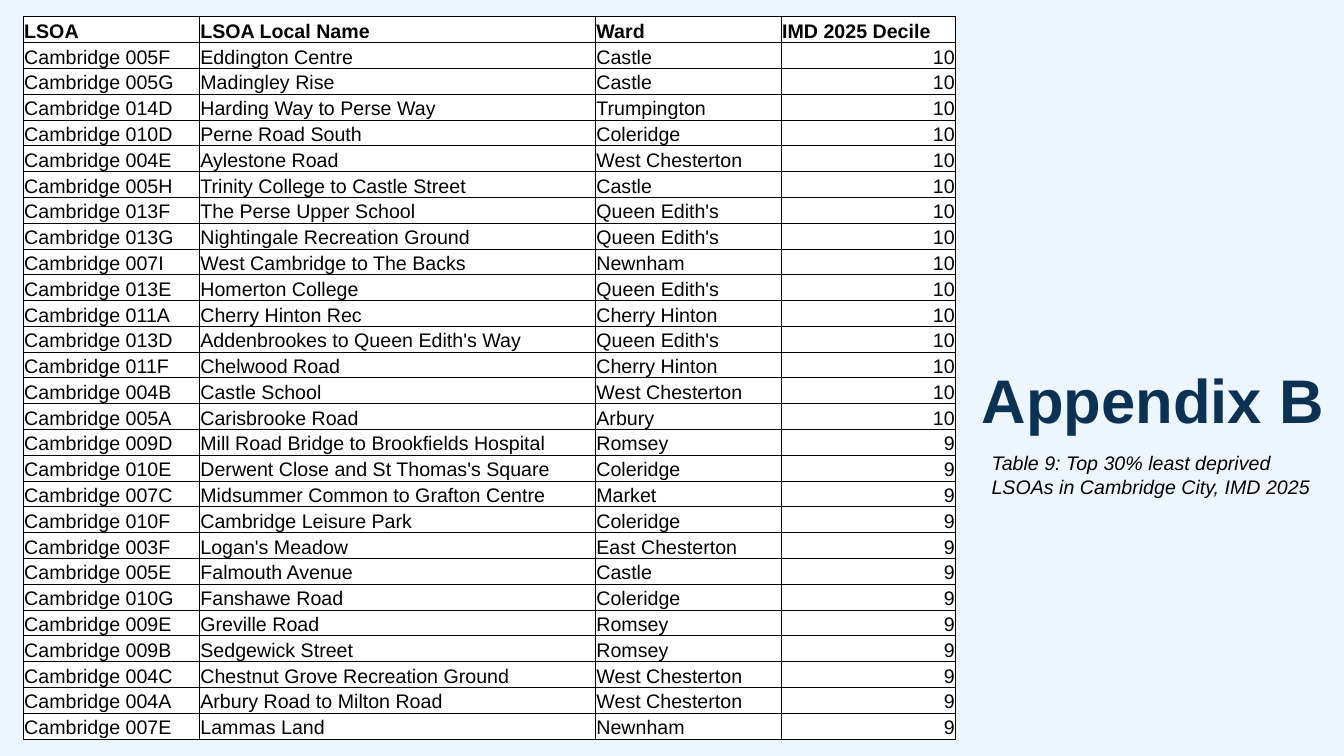
"""Build the Appendix B slide listing the least deprived LSOAs in Cambridge City."""
from dataclasses import dataclass

import pptx
import pptx.dml.color
import pptx.enum.text
import pptx.oxml
import pptx.oxml.ns
import pptx.util
from pptx.util import Cm

COLORS = {"background": "EDF6FF", "title": "0B3153", "text": "000000", "cell": "FFFFFF"}
FONT = "Arial"
ROW_HEIGHT = 0.65
BORDER_WIDTH = 0.5


@dataclass(frozen=True)
class Column:
    heading: str
    width: float
    right_aligned: bool = False


@dataclass(frozen=True)
class Area:
    code: str
    local_name: str
    ward: str
    decile: int

    def values(self) -> list[str]:
        return [f"Cambridge {self.code}", self.local_name, self.ward, str(self.decile)]


COLUMNS = [
    Column("LSOA", 4.44),
    Column("LSOA Local Name", 9.98),
    Column("Ward", 4.68),
    Column("IMD 2025 Decile", 4.39, right_aligned=True),
]

AREAS = [
    Area("005F", "Eddington Centre", "Castle", 10),
    Area("005G", "Madingley Rise", "Castle", 10),
    Area("014D", "Harding Way to Perse Way", "Trumpington", 10),
    Area("010D", "Perne Road South", "Coleridge", 10),
    Area("004E", "Aylestone Road", "West Chesterton", 10),
    Area("005H", "Trinity College to Castle Street", "Castle", 10),
    Area("013F", "The Perse Upper School", "Queen Edith's", 10),
    Area("013G", "Nightingale Recreation Ground", "Queen Edith's", 10),
    Area("007I", "West Cambridge to The Backs", "Newnham", 10),
    Area("013E", "Homerton College", "Queen Edith's", 10),
    Area("011A", "Cherry Hinton Rec", "Cherry Hinton", 10),
    Area("013D", "Addenbrookes to Queen Edith's Way", "Queen Edith's", 10),
    Area("011F", "Chelwood Road", "Cherry Hinton", 10),
    Area("004B", "Castle School", "West Chesterton", 10),
    Area("005A", "Carisbrooke Road", "Arbury", 10),
    Area("009D", "Mill Road Bridge to Brookfields Hospital", "Romsey", 9),
    Area("010E", "Derwent Close and St Thomas's Square", "Coleridge", 9),
    Area("007C", "Midsummer Common to Grafton Centre", "Market", 9),
    Area("010F", "Cambridge Leisure Park", "Coleridge", 9),
    Area("003F", "Logan's Meadow", "East Chesterton", 9),
    Area("005E", "Falmouth Avenue", "Castle", 9),
    Area("010G", "Fanshawe Road", "Coleridge", 9),
    Area("009E", "Greville Road", "Romsey", 9),
    Area("009B", "Sedgewick Street", "Romsey", 9),
    Area("004C", "Chestnut Grove Recreation Ground", "West Chesterton", 9),
    Area("004A", "Arbury Road to Milton Road", "West Chesterton", 9),
    Area("007E", "Lammas Land", "Newnham", 9),
]


def rgb(name: str) -> pptx.dml.color.RGBColor:
    return pptx.dml.color.RGBColor.from_string(COLORS[name])


def add_run(paragraph, text: str, size: float, color: str, bold=False, italic=False) -> None:
    run = paragraph.add_run()
    run.text = text
    run.font.name = FONT
    run.font.size = pptx.util.Pt(size)
    run.font.bold = bold
    run.font.italic = italic
    run.font.color.rgb = rgb(color)


def add_borders(cell) -> None:
    properties = cell._tc.get_or_add_tcPr()
    for side in ("lnL", "lnR", "lnT", "lnB"):
        properties.append(pptx.oxml.parse_xml(
            f'<a:{side} {pptx.oxml.ns.nsdecls("a")} w="{pptx.util.Pt(BORDER_WIDTH)}">'
            f'<a:solidFill><a:srgbClr val="{COLORS["text"]}"/></a:solidFill></a:{side}>'))


def fill_cell(cell, text: str, bold: bool, right_aligned: bool) -> None:
    add_borders(cell)
    cell.fill.solid()
    cell.fill.fore_color.rgb = rgb("cell")
    cell.margin_left = cell.margin_right = cell.margin_top = Cm(0.02)
    cell.margin_bottom = 0
    cell.vertical_anchor = pptx.enum.text.MSO_ANCHOR.BOTTOM
    paragraph = cell.text_frame.paragraphs[0]
    if right_aligned:
        paragraph.alignment = pptx.enum.text.PP_ALIGN.RIGHT
    add_run(paragraph, text, 14, "text", bold=bold)


def add_title(slide) -> None:
    title = slide.shapes.title
    title.left, title.top, title.width, title.height = Cm(24.74), Cm(9.07), Cm(8.86), Cm(2.18)
    frame = title.text_frame
    frame.margin_left = frame.margin_right = frame.margin_top = frame.margin_bottom = 0
    frame.auto_size = pptx.enum.text.MSO_AUTO_SIZE.NONE
    frame.vertical_anchor = pptx.enum.text.MSO_ANCHOR.MIDDLE
    paragraph = frame.paragraphs[0]
    paragraph.alignment = pptx.enum.text.PP_ALIGN.LEFT
    paragraph.line_spacing = 0.9
    paragraph.space_before = pptx.util.Pt(0)
    paragraph.space_after = pptx.util.Pt(6)
    add_run(paragraph, "Appendix B", 44, "title", bold=True)


def add_area_table(slide) -> None:
    rows = [[column.heading for column in COLUMNS]] + [area.values() for area in AREAS]
    width = sum(column.width for column in COLUMNS)
    table = slide.shapes.add_table(
        len(rows), len(COLUMNS), Cm(0.59), Cm(0.42), Cm(width), Cm(ROW_HEIGHT * len(rows))).table
    table.horz_banding = False
    for index, column in enumerate(COLUMNS):
        table.columns[index].width = Cm(column.width)
    for row_index, values in enumerate(rows):
        is_heading = row_index == 0
        table.rows[row_index].height = Cm(ROW_HEIGHT)
        for column_index, (column, value) in enumerate(zip(COLUMNS, values)):
            fill_cell(table.cell(row_index, column_index), value, is_heading,
                      column.right_aligned and not is_heading)


def add_caption(slide) -> None:
    caption = slide.shapes.add_textbox(Cm(24.74), Cm(11.25), Cm(8.86), Cm(1.45))
    caption.text_frame.word_wrap = True
    add_run(caption.text_frame.paragraphs[0],
            "Table 9: Top 30% least deprived LSOAs in Cambridge City, IMD 2025",
            14, "text", italic=True)


def main() -> None:
    presentation = pptx.Presentation()
    presentation.slide_width, presentation.slide_height = Cm(33.87), Cm(19.05)
    slide = presentation.slides.add_slide(presentation.slide_layouts[5])
    slide.background.fill.solid()
    slide.background.fill.fore_color.rgb = rgb("background")
    add_title(slide)
    add_area_table(slide)
    add_caption(slide)
    presentation.save("out.pptx")


if __name__ == "__main__":
    main()
